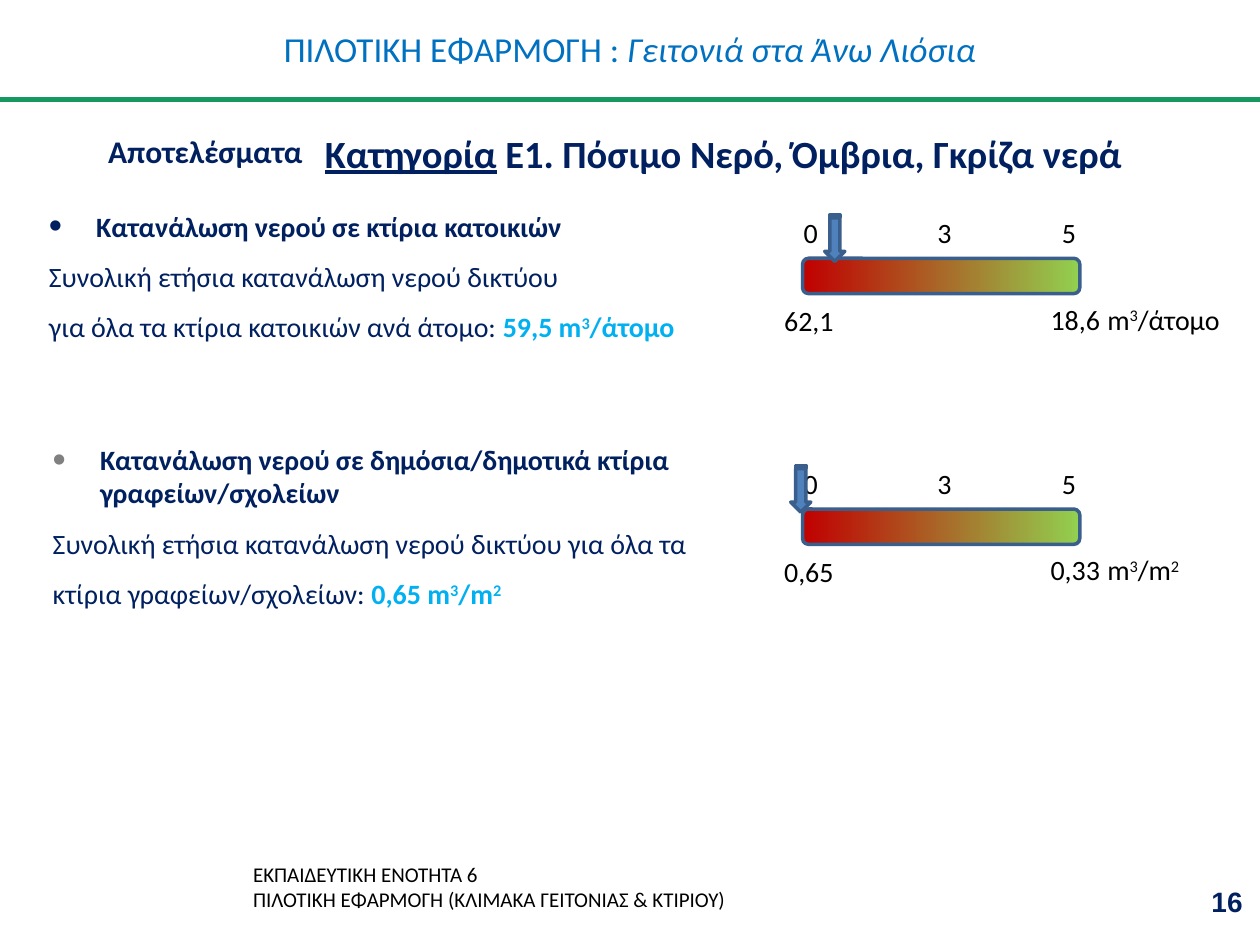
from lxml import etree
from pptx import Presentation
from pptx import util as u
from pptx.dml.color import RGBColor
from pptx.enum import shapes, text
from pptx.oxml.ns import qn

NAVY, BLUE, CYAN, BLACK = "002060", "0070C0", "00B0F0", "000000"
LEFT, MID, RIGHT = text.PP_ALIGN.LEFT, text.PP_ALIGN.CENTER, text.PP_ALIGN.RIGHT


def rgb(code):
    return RGBColor.from_string(code)


class Deck:
    """Draw styled elements on a slide with a grid of 100 columns and 75 rows."""

    def __init__(self):
        self.prs = Presentation()
        self.prs.slide_width, self.prs.slide_height = u.Inches(10), u.Inches(7.5)
        self.slide = self.prs.slides.add_slide(self.prs.slide_layouts[6])
        self.font, self.edge = "Calibri", "3A5F8C"

    def cell(self, *units):
        return [round(n * self.prs.slide_width / 100) for n in units]

    def rule(self, row, color, width):
        line = self.slide.shapes.add_connector(
            shapes.MSO_CONNECTOR.STRAIGHT, *self.cell(0, row, 100, row))
        line.line.color.rgb = rgb(color)
        line.line.width = u.Pt(width)
        etree.SubElement(line._element.spPr, qn("a:effectLst"))

    def box(self, at, wrap=True, grow=True, middle=False):
        frame = self.slide.shapes.add_textbox(*self.cell(*at)).text_frame
        frame.word_wrap = wrap
        if grow:
            frame.auto_size = text.MSO_AUTO_SIZE.SHAPE_TO_FIT_TEXT
        if middle:
            frame.vertical_anchor = text.MSO_ANCHOR.MIDDLE
        return frame

    def para(self, frame, runs, size=16, color=BLACK, bold=False, align=LEFT,
             space=None, dot=None, font=None):
        first = frame.paragraphs[0]
        par = frame.add_paragraph() if first.runs else first
        par.alignment = align
        if space:
            par.line_spacing = space
        if dot:
            self.bullet(par, dot)
        par.font.name, par.font.size = font or self.font, u.Pt(size)
        par.font.color.rgb = rgb(color)
        if bold:
            par.font.bold = True
        for words, marks in [(runs, "")] if isinstance(runs, str) else runs:
            for i, part in enumerate(words.split("\n")):
                if i:
                    par.add_line_break()
                self.run(par, part, marks)

    def run(self, par, words, marks):
        run = par.add_run()
        run.text = words
        if "i" in marks:
            run.font.italic = True
        if "u" in marks:
            run.font.underline = True
        if "c" in marks:
            run.font.bold = True
            run.font.color.rgb = rgb(CYAN)
        if "^" in marks:
            run._r.get_or_add_rPr().set("baseline", "30000")

    def bullet(self, par, color):
        props = par._p.get_or_add_pPr()
        indent = self.cell(3.75)[0]
        props.set("marL", str(indent))
        props.set("indent", str(-indent))
        tint = etree.SubElement(props, qn("a:buClr"))
        etree.SubElement(tint, qn("a:srgbClr"), val=color)
        etree.SubElement(props, qn("a:buSzPct"), val="135000")
        etree.SubElement(props, qn("a:buFont"), typeface="Arial")
        etree.SubElement(props, qn("a:buChar"), char="•")

    def label(self, at, runs, align=LEFT):
        self.para(self.box(at, wrap=False), runs, align=align)

    def shape(self, kind, at):
        form = self.slide.shapes.add_shape(kind, *self.cell(*at))
        form.shadow.inherit = False
        form.line.color.rgb = rgb(self.edge)
        form.line.width = u.Pt(2)
        return form

    def gauge(self, row, low, high, unit, wide, mark):
        bar = self.shape(shapes.MSO_SHAPE.ROUNDED_RECTANGLE, (63.7, row, 22, 2.8))
        bar.fill.gradient()
        bar.fill.gradient_angle = 0
        for stop, color in zip(bar.fill.gradient_stops, ("C00000", "92D050")):
            stop.color.rgb = rgb(color)
        for col, tick in ((62.8, "0"), (73.4, "3"), (83.3, "5")):
            self.label((col, row - 3.85, 3.2, 3.7), tick)
        self.label((61.2, row + 3.1, 6, 3.7), low, MID)
        self.label((86.9, row + 3, wide, 3.7), unit)
        self.label((82.4, row + 3, 6, 3.7), high)
        arrow = self.shape(shapes.MSO_SHAPE.STRIPED_RIGHT_ARROW,
                           (mark, row - 2.4, 3.7, 1.6))
        arrow.rotation = 90
        arrow.fill.solid()
        arrow.fill.fore_color.rgb = rgb("4F81BD")


def main():
    deck = Deck()
    deck.rule(7.9, "159961", 3)
    deck.para(deck.box((19.1, 67.9, 67.9, 5)),
              "ΕΚΠΑΙΔΕΥΤΙΚΗ ΕΝΟΤΗΤΑ 6\nΠΙΛΟΤΙΚΗ ΕΦΑΡΜΟΓΗ (ΚΛΙΜΑΚΑ ΓΕΙΤΟΝΙΑΣ & ΚΤΙΡΙΟΥ)", 12)
    deck.para(deck.box((0, 0, 100, 7.7), grow=False, middle=True),
              [("ΠΙΛΟΤΙΚΗ ΕΦΑΡΜΟΓΗ : ", ""), ("Γειτονιά στα Άνω Λιόσια", "i")],
              20, BLUE, align=MID)
    deck.para(deck.box((7.6, 10, 18.1, 4)), "Αποτελέσματα", 18, NAVY, True)
    deck.para(deck.box((24.8, 9.8, 75.2, 4.7)),
              [("Κατηγορία", "u"), (" E1. Πόσιμο Νερό, Όμβρια, Γκρίζα νερά", "")],
              22, NAVY, True)

    homes = deck.box((2.9, 16.1, 97.1, 11.8))
    deck.para(homes, "Κατανάλωση νερού σε κτίρια κατοικιών",
              color=NAVY, bold=True, dot=NAVY)
    deck.para(homes, "Συνολική ετήσια κατανάλωση νερού δικτύου", color=NAVY, space=1.5)
    deck.para(homes, [("για όλα τα κτίρια κατοικιών ανά άτομο: ", ""), ("59,5 m", "c"),
                      ("3", "c^"), ("/άτομο", "c")], color=NAVY, space=1.5)
    deck.gauge(20.5, "62,1", "18,6", [("m", ""), ("3", "^"), ("/άτομο", "")], 11.2, 64.4)

    works = deck.box((3.2, 34.6, 54.1, 14.5))
    deck.para(works, "Κατανάλωση νερού σε δημόσια/δημοτικά κτίρια γραφείων/σχολείων",
              color=NAVY, bold=True, dot="808080")
    deck.para(works, [("Συνολική ετήσια κατανάλωση νερού δικτύου για όλα τα κτίρια "
                       "γραφείων/σχολείων: ", ""), ("0,65 m", "c"), ("3", "c^"),
                      ("/m", "c"), ("2", "c^")], color=NAVY, space=1.5)
    deck.gauge(40.4, "0,65", "0,33",
               [("m", ""), ("3", "^"), ("/m", ""), ("2", "^")], 8, 61.7)

    deck.para(deck.box((76.3, 69.5, 23.3, 4), grow=False, middle=True), "16",
              color=NAVY, bold=True, align=RIGHT, font="Arial")
    deck.prs.save("out.pptx")


if __name__ == "__main__":
    main()
